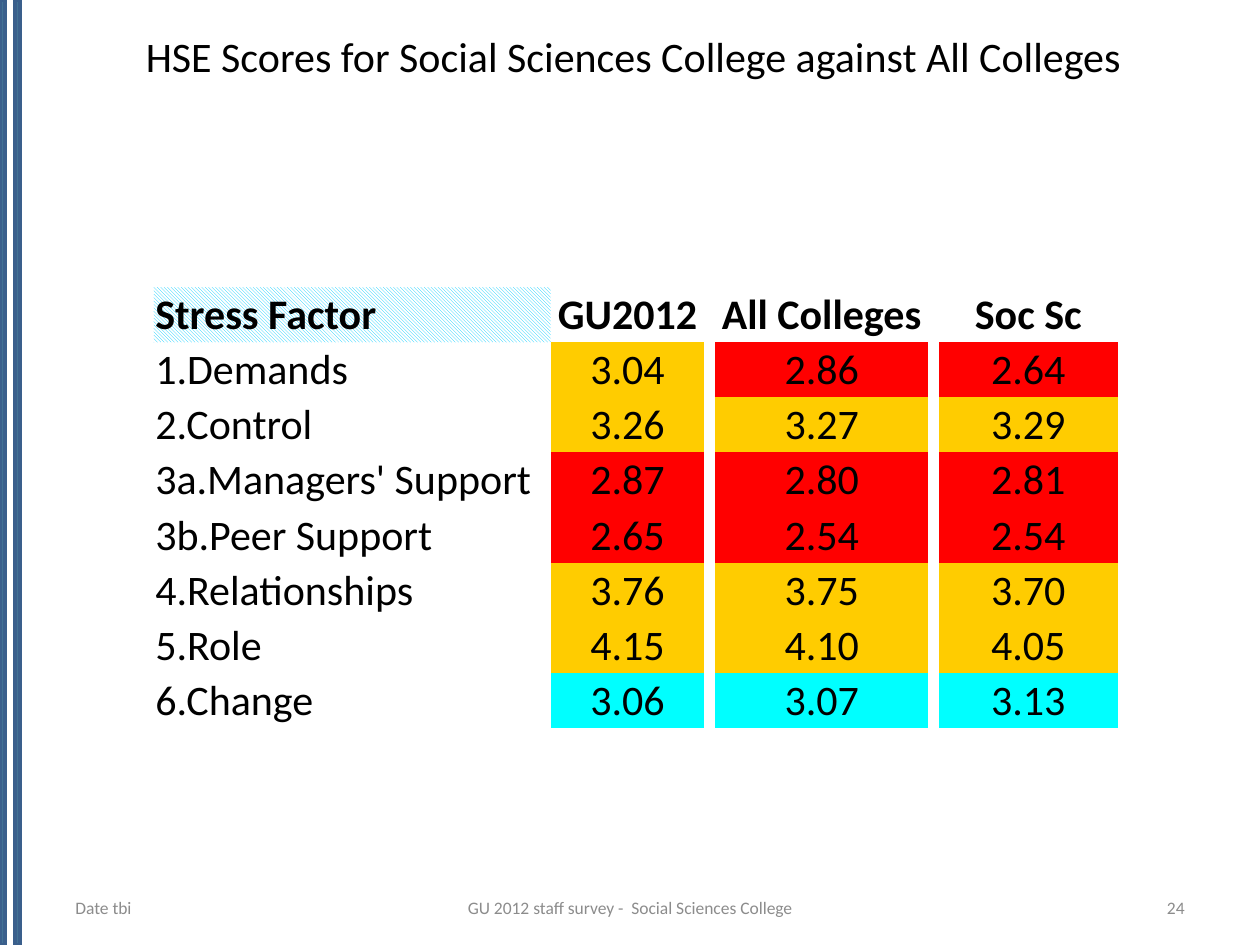
from pptx import Presentation
from pptx.dml.color import RGBColor
from pptx.enum.dml import MSO_PATTERN
from pptx.enum.shapes import MSO_SHAPE
from pptx.enum.text import MSO_ANCHOR, PP_ALIGN
from pptx.oxml.ns import qn
from pptx.util import Cm, Pt

BLACK = RGBColor(0x00, 0x00, 0x00)
WHITE = RGBColor(0xFF, 0xFF, 0xFF)
GREY = RGBColor(0x8C, 0x8C, 0x8C)
STRIPE_FILL = RGBColor(0x42, 0x72, 0x94)
STRIPE_EDGE = RGBColor(0x3A, 0x5F, 0x8C)
HATCH = RGBColor(0x00, 0xCC, 0xFF)
AMBER = RGBColor(0xFF, 0xCC, 0x00)
RED = RGBColor(0xFF, 0x00, 0x00)
CYAN = RGBColor(0x00, 0xFF, 0xFF)

FONT = "Calibri"
NO_GRID_STYLE = "{2D5ABB26-0587-4C30-8999-92F81FD0307C}"
SLIDE_WIDTH, SLIDE_HEIGHT = 25.4, 19.05

HEADINGS = ["Stress Factor", "GU2012", "All Colleges", "Soc Sc"]
FACTORS = [
    ("1.Demands", ["3.04", "2.86", "2.64"], [AMBER, RED, RED]),
    ("2.Control", ["3.26", "3.27", "3.29"], [AMBER] * 3),
    ("3a.Managers' Support", ["2.87", "2.80", "2.81"], [RED] * 3),
    ("3b.Peer Support", ["2.65", "2.54", "2.54"], [RED] * 3),
    ("4.Relationships", ["3.76", "3.75", "3.70"], [AMBER] * 3),
    ("5.Role", ["4.15", "4.10", "4.05"], [AMBER] * 3),
    ("6.Change", ["3.06", "3.07", "3.13"], [CYAN] * 3),
]
COLUMN_WIDTHS = [8, 3.1, 0.22, 4.29, 0.22, 3.6]
TEXT_COLUMNS = [0, 1, 3, 5]
ROW_HEIGHT = 1.11


def write(frame, text, size, color, align, bold=False):
    paragraph = frame.paragraphs[0]
    paragraph.alignment = align
    run = paragraph.add_run()
    run.text = text
    run.font.name = FONT
    run.font.size = Pt(size)
    run.font.bold = bold
    run.font.color.rgb = color


def add_stripe(slide, left):
    stripe = slide.shapes.add_shape(
        MSO_SHAPE.RECTANGLE, Cm(left), Cm(0), Cm(0.1), Cm(SLIDE_HEIGHT))
    stripe.shadow.inherit = False
    stripe.fill.solid()
    stripe.fill.fore_color.rgb = STRIPE_FILL
    stripe.line.color.rgb = STRIPE_EDGE
    stripe.line.width = Pt(2)


def add_label(slide, text, left, top, width, height, size, color, align):
    label = slide.shapes.add_textbox(Cm(left), Cm(top), Cm(width), Cm(height))
    frame = label.text_frame
    frame.word_wrap = True
    frame.vertical_anchor = MSO_ANCHOR.MIDDLE
    write(frame, text, size, color, align)


def fill_row(table, row, texts, fills, bold=False):
    for column, text, fill in zip(TEXT_COLUMNS, texts, fills):
        cell = table.cell(row, column)
        align = PP_ALIGN.CENTER if column else PP_ALIGN.LEFT
        write(cell.text_frame, text, 24, BLACK, align, bold)
        if fill is not None:
            cell.fill.solid()
            cell.fill.fore_color.rgb = fill


def add_scores(slide):
    row_count = len(FACTORS) + 1
    table = slide.shapes.add_table(
        row_count, len(COLUMN_WIDTHS), Cm(3.1), Cm(5.79),
        Cm(sum(COLUMN_WIDTHS)), Cm(ROW_HEIGHT * row_count)).table
    table.first_row = False
    table.horz_banding = False
    table._tbl.tblPr.find(qn("a:tableStyleId")).text = NO_GRID_STYLE
    for column, width in zip(table.columns, COLUMN_WIDTHS):
        column.width = Cm(width)
    for row in table.rows:
        row.height = Cm(ROW_HEIGHT)
    for cell in table.iter_cells():
        cell.margin_left = cell.margin_right = cell.margin_top = Cm(0.03)
        cell.margin_bottom = Cm(0)
        cell.vertical_anchor = MSO_ANCHOR.MIDDLE
        cell.fill.background()

    fill_row(table, 0, HEADINGS, [None] * len(HEADINGS), bold=True)
    corner = table.cell(0, 0).fill
    corner.patterned()
    corner.pattern = MSO_PATTERN.LIGHT_DOWNWARD_DIAGONAL
    corner.fore_color.rgb = HATCH
    corner.back_color.rgb = WHITE
    for row, (factor, scores, bands) in enumerate(FACTORS, start=1):
        fill_row(table, row, [factor, *scores], [None, *bands])


def add_footer(slide):
    for text, left, width, align in [
        ("Date tbi", 1.27, 5.93, PP_ALIGN.LEFT),
        ("GU 2012 staff survey -  Social Sciences College", 8.68, 8.04,
         PP_ALIGN.CENTER),
        ("24", 18.2, 5.93, PP_ALIGN.RIGHT),
    ]:
        add_label(slide, text, left, 17.93, width, 0.75, 10, GREY, align)


def main():
    deck = Presentation()
    deck.slide_width, deck.slide_height = Cm(SLIDE_WIDTH), Cm(SLIDE_HEIGHT)
    slide = deck.slides.add_slide(deck.slide_layouts[6])
    for left in (0, 0.3):
        add_stripe(slide, left)
    add_label(slide, "HSE Scores for Social Sciences College against All Colleges",
              1.27, 0.33, 23, 1.6, 24, BLACK, PP_ALIGN.CENTER)
    add_footer(slide)
    add_scores(slide)
    deck.save("out.pptx")


if __name__ == "__main__":
    main()
